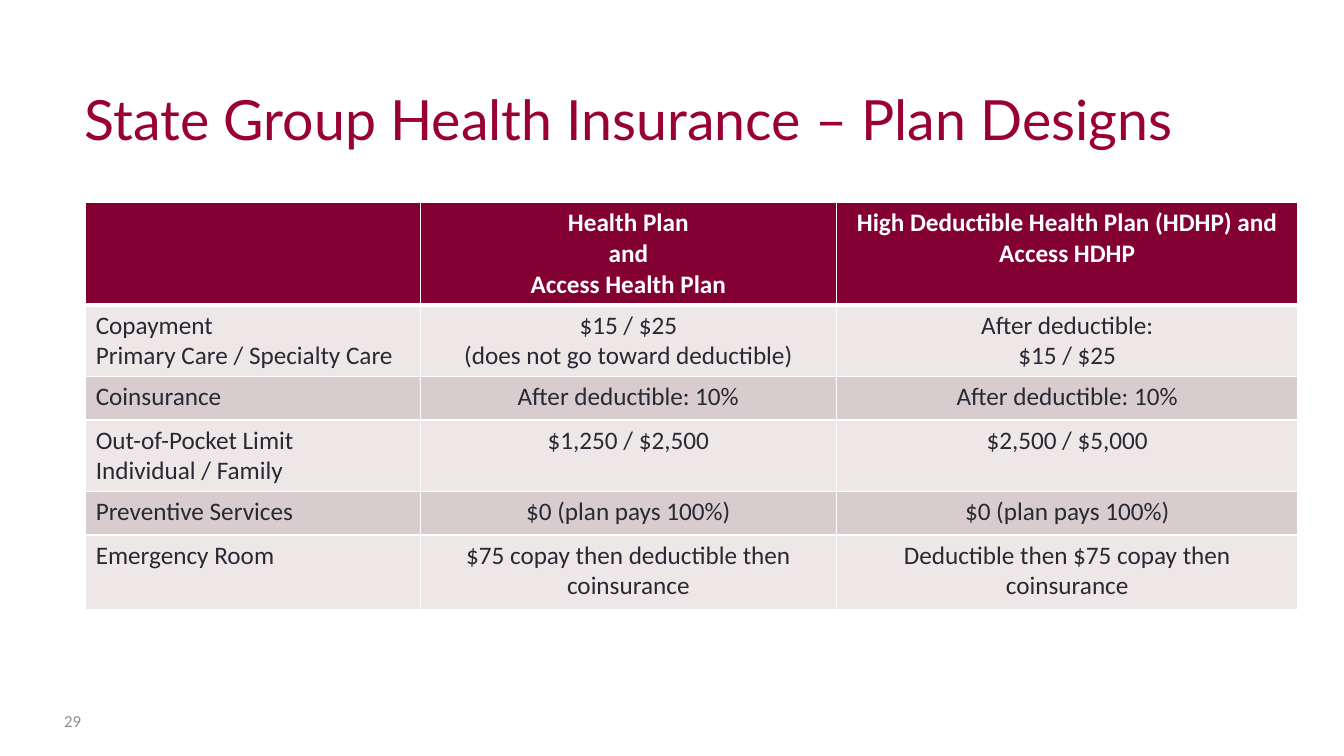
from dataclasses import dataclass

from lxml.etree import SubElement
from pptx import Presentation
from pptx.dml.color import RGBColor
from pptx.enum.text import MSO_ANCHOR, MSO_AUTO_SIZE, PP_ALIGN
from pptx.oxml.ns import qn
from pptx.table import _Cell as Cell
from pptx.text.text import TextFrame
from pptx.util import Cm, Pt

WHITE = RGBColor(0xFF, 0xFF, 0xFF)
WINE = RGBColor(0x82, 0x00, 0x32)
ROSE = RGBColor(0x99, 0x00, 0x33)
INK = RGBColor(0x29, 0x29, 0x34)
GREY = RGBColor(0x8E, 0x8E, 0x90)
PALE = RGBColor(0xED, 0xE7, 0xE8)
MAUVE = RGBColor(0xD8, 0xCC, 0xCE)


@dataclass
class Row:
    high: float
    texts: tuple[str, str, str]


WIDTHS = (8.43, 10.49, 11.63)
ROWS = (
    Row(2.44, ("", "Health Plan\nand\nAccess Health Plan",
               "High Deductible Health Plan (HDHP) and\nAccess HDHP")),
    Row(1.75, ("Copayment\nPrimary Care / Specialty Care",
               "$15 / $25\n(does not go toward deductible)",
               "After deductible:\n$15 / $25")),
    Row(1.09, ("Coinsurance", "After deductible: 10%", "After deductible: 10%")),
    Row(1.7, ("Out-of-Pocket Limit\nIndividual / Family",
              "$1,250 / $2,500", "$2,500 / $5,000")),
    Row(1.09, ("Preventive Services", "$0 (plan pays 100%)", "$0 (plan pays 100%)")),
    Row(1.88, ("Emergency Room", "$75 copay then deductible then coinsurance",
               "Deductible then $75 copay then coinsurance")),
)


def write(frame: TextFrame, text: str, *, size: float, color: RGBColor,
          font: str = "Calibri", bold: bool = False,
          align: PP_ALIGN = PP_ALIGN.LEFT) -> None:
    frame.text = text
    for para in frame.paragraphs:
        para.alignment = align
        para.font.size = Pt(size)
        para.font.name = font
        para.font.bold = bold
        para.font.color.rgb = color


def edge(cell: Cell, side: str, width: float) -> None:
    props = cell._tc.get_or_add_tcPr()
    line = SubElement(props, qn(f"a:ln{side}"), w=str(Pt(width)))
    fill = SubElement(line, qn("a:solidFill"))
    SubElement(fill, qn("a:srgbClr"), val=str(WHITE))


def paint(cell: Cell, row: int, col: int, text: str) -> None:
    head = row == 0
    edges = {"L": 1, "R": 1, "T": 3 if row == 1 else 1, "B": 3 if head else 1}
    for side, width in edges.items():
        edge(cell, side, width)
    cell.fill.solid()
    cell.fill.fore_color.rgb = WINE if head else PALE if row % 2 else MAUVE
    write(cell.text_frame, text, size=18, color=WHITE if head else INK, bold=head,
          align=PP_ALIGN.CENTER if col else PP_ALIGN.LEFT)


def main() -> None:
    deck = Presentation()
    deck.slide_width, deck.slide_height = Cm(33.87), Cm(19.05)
    slide = deck.slides.add_slide(deck.slide_layouts[5])

    title = slide.shapes.title
    title.left, title.top = Cm(1.88), Cm(0.76)
    title.width, title.height = Cm(30.33), Cm(3.18)
    frame = title.text_frame
    frame.auto_size = MSO_AUTO_SIZE.NONE
    frame.vertical_anchor = MSO_ANCHOR.BOTTOM
    write(frame, "State Group Health Insurance – Plan Designs",
          size=39.6, color=ROSE, font="Lato")

    table = slide.shapes.add_table(
        len(ROWS), len(WIDTHS), Cm(2.16), Cm(5.11), Cm(sum(WIDTHS)),
        Cm(sum(row.high for row in ROWS))).table
    for col, width in enumerate(WIDTHS):
        table.columns[col].width = Cm(width)
    for num, row in enumerate(ROWS):
        table.rows[num].height = Cm(row.high)
        for col, text in enumerate(row.texts):
            paint(table.cell(num, col), num, col, text)

    page = slide.shapes.add_textbox(Cm(1.37), Cm(17.65), Cm(1.42), Cm(1.02)).text_frame
    page.word_wrap = True
    page.vertical_anchor = MSO_ANCHOR.MIDDLE
    write(page, "29", size=12, color=GREY)

    deck.save("out.pptx")


if __name__ == "__main__":
    main()
